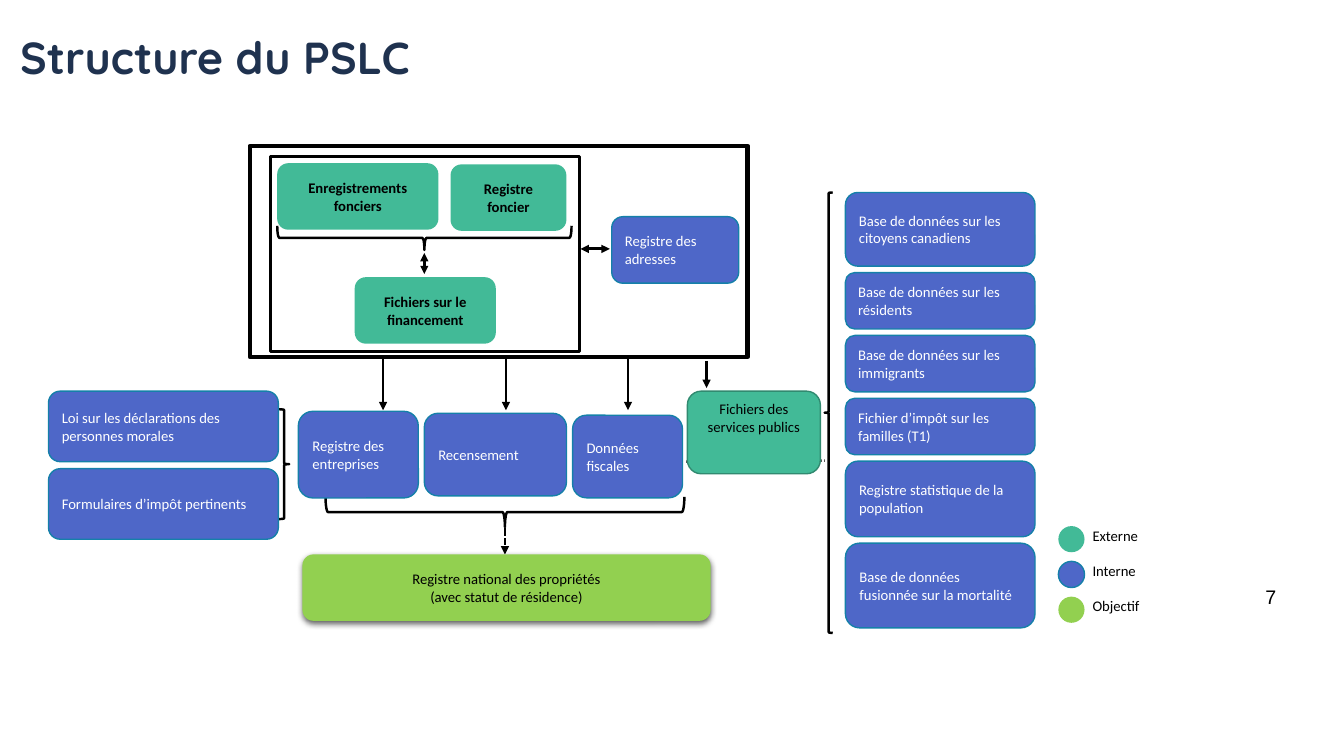
from lxml.etree import SubElement
from pptx import Presentation
from pptx.dml.color import RGBColor
from pptx.enum.dml import MSO_LINE_DASH_STYLE as DASH
from pptx.enum.shapes import MSO_CONNECTOR, MSO_SHAPE as SHAPE
from pptx.enum.text import MSO_ANCHOR as ANCHOR, MSO_AUTO_SIZE as AUTO, PP_ALIGN as ALIGN
from pptx.oxml.ns import qn
from pptx.util import Pt

COLOURS = {
    "external": "42BA97", "external edge": "318A70",
    "internal": "4E67C8", "internal edge": "1580A9",
    "target": "92D050", "title": "1F324F", "black": "000000", "white": "FFFFFF",
}
LABEL = {"name": "Calibri", "size": Pt(10.5)}

deck = Presentation()
deck.slide_width, deck.slide_height = Pt(960), Pt(540)
page = deck.slides.add_slide(deck.slide_layouts[5])


def write(box, text, colour, font, align=ALIGN.LEFT, anchor=ANCHOR.MIDDLE):
    """Fill a shape with one formatted paragraph per line of text."""
    frame = box.text_frame
    frame.text = text
    for name, value in {"word_wrap": True, "auto_size": AUTO.NONE,
                        "vertical_anchor": anchor}.items():
        setattr(frame, name, value)
    for para in frame.paragraphs:
        para.alignment = align
        for name, value in font.items():
            setattr(para.font, name, value)
        para.font.color.rgb = RGBColor.from_string(COLOURS[colour])


def add_outline(kind, bounds, fill=None, edge=None, weight=1):
    shape = page.shapes.add_shape(kind, *map(Pt, bounds))
    shape.shadow.inherit = False
    if fill:
        shape.fill.solid()
        shape.fill.fore_color.rgb = RGBColor.from_string(COLOURS[fill])
    else:
        shape.fill.background()
    if edge:
        shape.line.color.rgb = RGBColor.from_string(COLOURS[edge])
        shape.line.width = Pt(weight)
    else:
        shape.line.fill.background()
    return shape


# Title and page number
title = page.shapes.title
title.left, title.top, title.width, title.height = map(Pt, (7.2, 17.3, 665.3, 46.8))
write(title, "Structure du PSLC", "title",
      {"name": "Quicksand", "size": Pt(32), "bold": True})
number = page.shapes.add_textbox(*map(Pt, (858.2, 414, 60.5, 37.4)))
write(number, "7", "black", {"name": "Arial", "size": Pt(14)}, ALIGN.RIGHT, ANCHOR.TOP)

# Frames and braces: kind, bounds, line weight, rotation
for kind, bounds, weight, turn in [
    (SHAPE.RECTANGLE, (178.5, 104.4, 355.7, 150.5), 3.25, 0),
    (SHAPE.RECTANGLE, (193, 111.6, 221, 139.7), 2, 0),
    (SHAPE.LEFT_BRACE, (294.5, 64.8, 17.3, 210.2), 1.75, 270),
    (SHAPE.LEFT_BRACE, (349.9, 237.6, 21.6, 256.3), 1.75, 270),
    (SHAPE.LEFT_BRACE, (589, 137.5, 5.8, 314.6), 1.75, 0),
    (SHAPE.RIGHT_BRACE, (199.4, 292.3, 7.2, 78.5), 1.75, 0),
]:
    add_outline(kind, bounds, edge="black", weight=weight).rotation = turn

# Links: ends, weight, dashed, arrowheads
links = [
    ((303.1, 180.7, 303.1, 195.8), 1.75, False, ("headEnd", "tailEnd")),
    ((414.7, 177.8, 435.6, 177.8), 2, False, ("headEnd", "tailEnd")),
    ((360.7, 377.3, 360.7, 396), 1.75, True, ("tailEnd",)),
    ((490.3, 329.8, 589, 329), 1.75, True, ()),
    ((504.7, 257.8, 504.7, 277.2), 1.75, False, ("tailEnd",)),
]
links += [((x, 256, x, 293), 1.75, False, ("tailEnd",)) for x in (273.6, 361.4, 448.6)]
for ends, weight, dashed, arrowheads in links:
    link = page.shapes.add_connector(MSO_CONNECTOR.STRAIGHT, *map(Pt, ends))
    link.line.color.rgb = RGBColor.from_string(COLOURS["black"])
    link.line.width = Pt(weight)
    if dashed:
        link.line.dash_style = DASH.SQUARE_DOT
    for end in arrowheads:
        SubElement(link.line._get_or_add_ln(), qn("a:" + end), type="triangle")
    SubElement(link._element.spPr, qn("a:effectLst"))

# External sources inside the inner frame
for text, bounds in [
    ("Enregistrements fonciers", (198, 116.6, 115.2, 47.5)),
    ("Registre foncier", (321.8, 117.4, 82.8, 47.5)),
    ("Fichiers sur le financement", (253.4, 198, 100.8, 47.5)),
]:
    box = add_outline(SHAPE.ROUNDED_RECTANGLE, bounds, "external")
    write(box, text, "black", {**LABEL, "bold": True}, ALIGN.CENTER)

# Internal sources, with the right-hand column stacked at equal gaps
internal = [
    ("Registre des adresses", (437, 154.8, 90.7, 47.5)),
    ("Registre des entreprises", (213.1, 293.8, 85.7, 61.9)),
    ("Recensement", (303.1, 295.2, 101.5, 59)),
    ("Données fiscales", (409, 296.6, 78.5, 59)),
    ("Loi sur les déclarations des personnes morales", (34.6, 279.4, 164.2, 50.4)),
    ("Formulaires d’impôt pertinents", (34.6, 334.8, 164.2, 50.4)),
]
top = 137.5
for text, height in [
    ("Base de données sur les citoyens canadiens", 52.6),
    ("Base de données sur les résidents", 40.3),
    ("Base de données sur les immigrants", 40.3),
    ("Fichier d’impôt sur les familles (T1)", 40.3),
    ("Registre statistique de la population", 54),
    ("Base de données fusionnée sur la mortalité", 60.5),
]:
    internal.append((text, (603.9, top, 135.4, height)))
    top += height + 4.6
for text, bounds in internal:
    box = add_outline(SHAPE.ROUNDED_RECTANGLE, bounds, "internal", "internal edge")
    write(box, text, "white", LABEL)

# Utility files and the target register
utilities = add_outline(SHAPE.ROUNDED_RECTANGLE, (491, 279.4, 95, 59),
                        "external", "external edge")
write(utilities, "Fichiers des services publics", "black", LABEL, ALIGN.CENTER, ANCHOR.TOP)

target = add_outline(SHAPE.ROUNDED_RECTANGLE, (216, 396, 291.6, 47.5), "target")
write(target, "Registre national des propriétés\n(avec statut de résidence)",
      "black", LABEL, ALIGN.CENTER)
effects = target._element.spPr.find(qn("a:effectLst"))
shadow = SubElement(effects, qn("a:outerShdw"), blurRad=str(Pt(4.5)), dist=str(Pt(1.5)),
                    dir="5400000", algn="ctr", rotWithShape="0")
shade = SubElement(shadow, qn("a:srgbClr"), val=COLOURS["black"])
SubElement(shade, qn("a:alpha"), val="63000")

# Legend
for row, (text, fill, edge) in enumerate([
    ("Externe", "external", None),
    ("Interne", "internal", "internal edge"),
    ("Objectif", "target", None),
]):
    add_outline(SHAPE.OVAL, (756, 375.8 + 25.2 * row, 18.7, 18.7), fill, edge)
    label = page.shapes.add_textbox(*map(Pt, (773.3, 373 + 25 * row, 58.3, 20.2)))
    write(label, text, "black", LABEL, anchor=ANCHOR.TOP)

deck.save("out.pptx")
